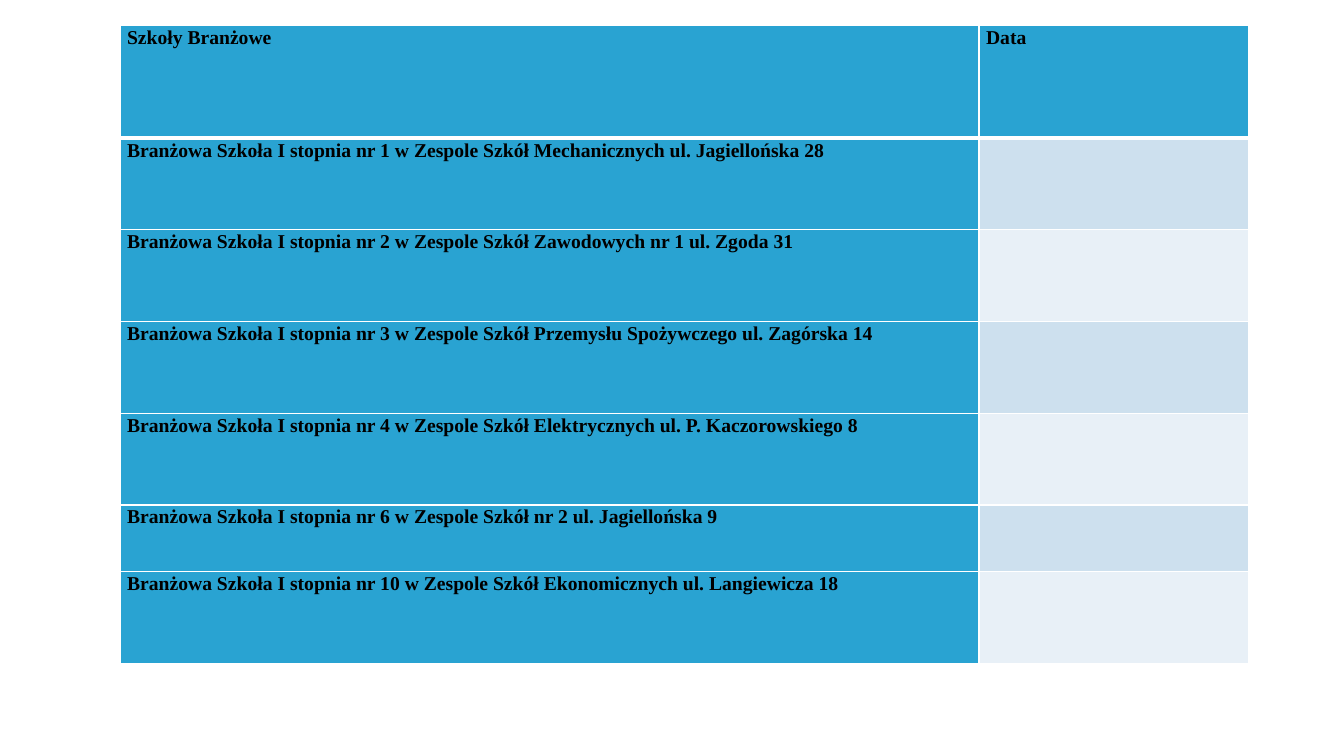
from lxml import etree
from pptx import Presentation
from pptx.dml.color import RGBColor
from pptx.oxml.ns import qn
from pptx.util import Inches, Pt

BLUE = RGBColor(0x29, 0xA3, 0xD2)
BAND_DARK = RGBColor(0xCD, 0xE0, 0xEE)
BAND_LIGHT = RGBColor(0xE8, 0xF0, 0xF7)
BLACK = RGBColor(0x00, 0x00, 0x00)
WHITE = RGBColor(0xFF, 0xFF, 0xFF)

HEADINGS = ["Szkoły Branżowe", "Data"]
SCHOOLS = [
    "nr 1 w Zespole Szkół Mechanicznych ul. Jagiellońska 28",
    "nr 2 w Zespole Szkół Zawodowych nr 1 ul. Zgoda 31",
    "nr 3 w Zespole Szkół Przemysłu Spożywczego ul. Zagórska 14",
    "nr 4 w Zespole Szkół Elektrycznych ul. P. Kaczorowskiego 8",
    "nr 6 w Zespole Szkół nr 2 ul. Jagiellońska 9",
    "nr 10 w Zespole Szkół Ekonomicznych ul. Langiewicza 18",
]
COLUMN_WIDTHS = [8.52, 2.67]
ROW_HEIGHTS = [1.12, 0.91, 0.91, 0.91, 0.91, 0.66, 0.91]


def add_borders(cell, top, bottom):
    properties = cell._tc.get_or_add_tcPr()
    for side, width in (("L", 1), ("R", 1), ("T", top), ("B", bottom)):
        line = etree.SubElement(properties, qn(f"a:ln{side}"), w=str(Pt(width)))
        solid = etree.SubElement(line, qn("a:solidFill"))
        etree.SubElement(solid, qn("a:srgbClr"), val=str(WHITE))


def write_cell(cell, text):
    paragraph = cell.text_frame.paragraphs[0]
    paragraph.line_spacing = 1.07
    paragraph.space_after = Pt(8)
    run = paragraph.add_run()
    run.text = text
    run.font.name = "Times New Roman"
    run.font.size = Pt(14)
    run.font.bold = True
    run.font.color.rgb = BLACK


prs = Presentation()
prs.slide_width = Inches(13.33)
prs.slide_height = Inches(7.5)
slide = prs.slides.add_slide(prs.slide_layouts[6])

schedule = slide.shapes.add_table(
    len(ROW_HEIGHTS), len(COLUMN_WIDTHS), Inches(1.19), Inches(0.25),
    Inches(sum(COLUMN_WIDTHS)), Inches(sum(ROW_HEIGHTS))).table
for column, width in zip(schedule.columns, COLUMN_WIDTHS):
    column.width = Inches(width)
for row, height in zip(schedule.rows, ROW_HEIGHTS):
    row.height = Inches(height)

rows = [HEADINGS] + [[f"Branżowa Szkoła I stopnia {school}", ""] for school in SCHOOLS]
for r, texts in enumerate(rows):
    for c, text in enumerate(texts):
        cell = schedule.cell(r, c)
        add_borders(cell, 3 if r == 1 else 1, 3 if r == 0 else 1)
        cell.fill.solid()
        if text:
            cell.fill.fore_color.rgb = BLUE
            cell.margin_left = cell.margin_right = Inches(0.07)
            cell.margin_top = cell.margin_bottom = 0
            write_cell(cell, text)
        else:
            cell.fill.fore_color.rgb = BAND_DARK if r % 2 else BAND_LIGHT

prs.save("out.pptx")
